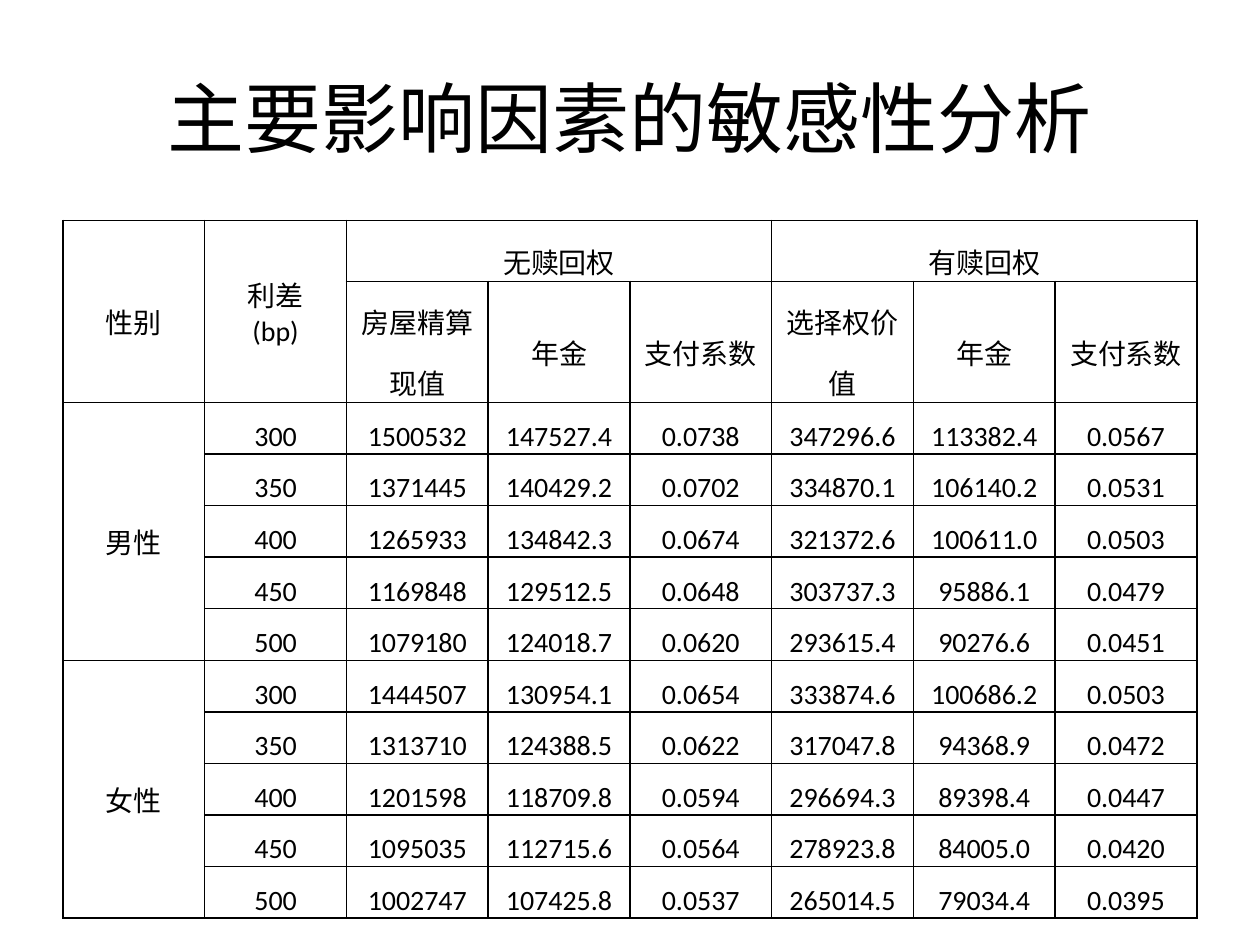
from pptx import Presentation
from pptx.util import Cm, Pt
from pptx.dml.color import RGBColor
from pptx.enum.text import PP_ALIGN, MSO_ANCHOR
from pptx.oxml import parse_xml
from pptx.oxml.ns import nsdecls

BLACK = "000000"
HEADERS = [
    ["性别", "利差\n(bp)", "无赎回权", "", "", "有赎回权", "", ""],
    ["", "", "房屋精算现值", "年金", "支付系数", "选择权价值", "年金", "支付系数"],
]
RESULTS = [
    ["男性", "300", "1500532", "147527.4", "0.0738", "347296.6", "113382.4", "0.0567"],
    ["", "350", "1371445", "140429.2", "0.0702", "334870.1", "106140.2", "0.0531"],
    ["", "400", "1265933", "134842.3", "0.0674", "321372.6", "100611.0", "0.0503"],
    ["", "450", "1169848", "129512.5", "0.0648", "303737.3", "95886.1", "0.0479"],
    ["", "500", "1079180", "124018.7", "0.0620", "293615.4", "90276.6", "0.0451"],
    ["女性", "300", "1444507", "130954.1", "0.0654", "333874.6", "100686.2", "0.0503"],
    ["", "350", "1313710", "124388.5", "0.0622", "317047.8", "94368.9", "0.0472"],
    ["", "400", "1201598", "118709.8", "0.0594", "296694.3", "89398.4", "0.0447"],
    ["", "450", "1095035", "112715.6", "0.0564", "278923.8", "84005.0", "0.0420"],
    ["", "500", "1002747", "107425.8", "0.0537", "265014.5", "79034.4", "0.0395"],
]
ROW_HEIGHTS = [1.23, 2.44] + [1.04] * len(RESULTS)
# First row, first column, last row, last column
MERGES = [(0, 0, 1, 0), (0, 1, 1, 1), (0, 2, 0, 4), (0, 5, 0, 7),
          (2, 0, 6, 0), (7, 0, 11, 0)]


def write_text(text_frame, text, size, spacing=None):
    for index, line in enumerate(text.split("\n")):
        paragraph = text_frame.add_paragraph() if index else text_frame.paragraphs[0]
        paragraph.alignment = PP_ALIGN.CENTER
        if spacing:
            paragraph.line_spacing = spacing
        run = paragraph.add_run()
        run.text = line
        run.font.size = Pt(size)
        run.font.name = "Calibri"
        run.font.color.rgb = RGBColor.from_string(BLACK)


def add_borders(cell, color, width):
    properties = cell._tc.get_or_add_tcPr()
    for index, side in enumerate(("lnL", "lnR", "lnT", "lnB")):
        properties.insert(index, parse_xml(
            f'<a:{side} {nsdecls("a")} w="{Pt(width)}"><a:solidFill>'
            f'<a:srgbClr val="{color}"/></a:solidFill></a:{side}>'))


presentation = Presentation()
presentation.slide_width = Cm(25.4)
presentation.slide_height = Cm(19.05)
slide = presentation.slides.add_slide(presentation.slide_layouts[6])

# Title
title = slide.shapes.add_textbox(Cm(1.27), Cm(0.76), Cm(22.86), Cm(3.18))
title.text_frame.word_wrap = True
title.text_frame.vertical_anchor = MSO_ANCHOR.MIDDLE
write_text(title.text_frame, "主要影响因素的敏感性分析", 44)

# Table grid
rows = HEADERS + RESULTS
frame = slide.shapes.add_table(len(rows), len(rows[0]), Cm(1.27), Cm(4.44),
                               Cm(22.86), Cm(sum(ROW_HEIGHTS)))
table = frame.table
table.first_row = False
table.horz_banding = False
for row, height in zip(table.rows, ROW_HEIGHTS):
    row.height = Cm(height)
for top, left, bottom, right in MERGES:
    table.cell(top, left).merge(table.cell(bottom, right))

# Table cells
for row_index, values in enumerate(rows):
    for column_index, value in enumerate(values):
        cell = table.cell(row_index, column_index)
        cell.fill.background()
        cell.vertical_anchor = MSO_ANCHOR.MIDDLE
        cell.margin_left = cell.margin_right = Cm(0.18)
        cell.margin_top = cell.margin_bottom = 0
        add_borders(cell, BLACK, 1)
        if value:
            write_text(cell.text_frame, value, 16, None if "\n" in value else 1.5)
        if value in ("男性", "女性"):
            cell._tc.get_or_add_tcPr().set("vert", "eaVert")

presentation.save("out.pptx")
